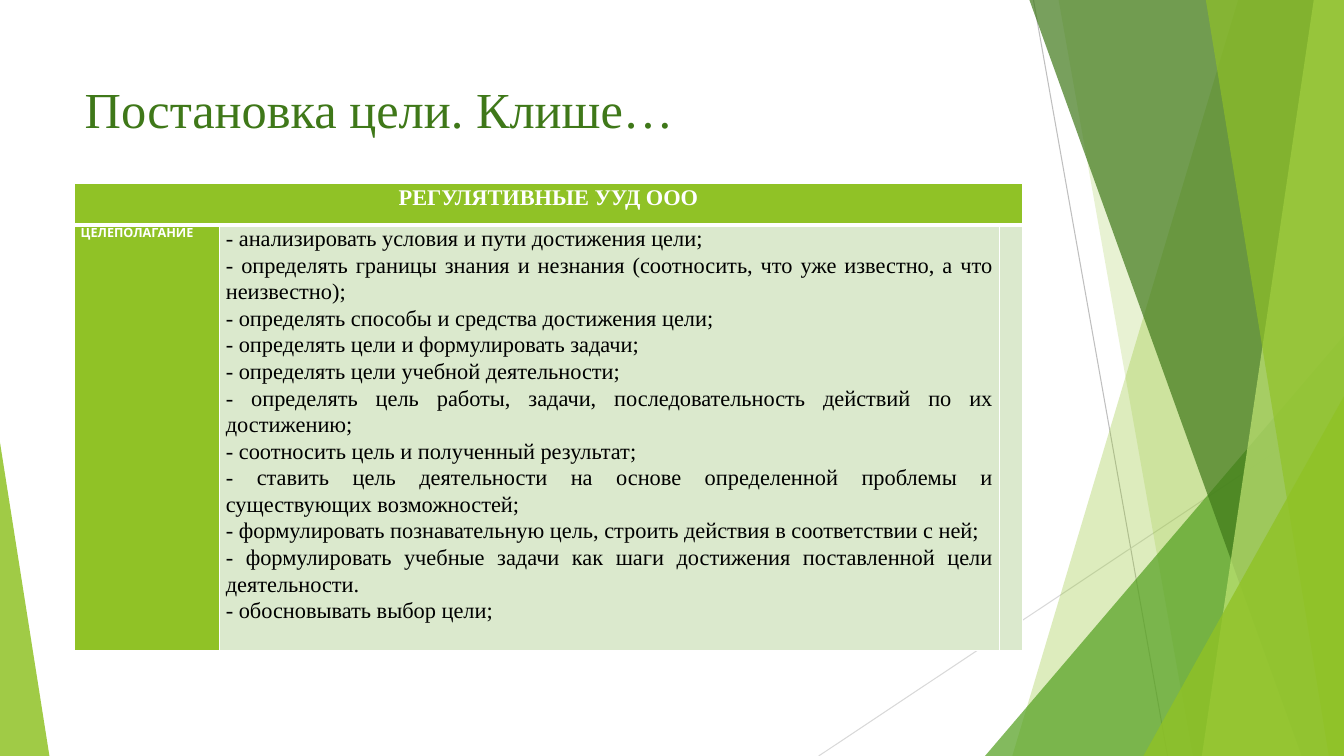
from dataclasses import dataclass

from lxml.etree import SubElement
from pptx import Presentation
from pptx.dml.color import RGBColor
from pptx.enum.shapes import MSO_CONNECTOR, MSO_SHAPE
from pptx.enum.text import MSO_ANCHOR, PP_ALIGN
from pptx.oxml.ns import qn
from pptx.util import Pt

PX = 9144  # 100 px to the inch
WIDTH, HEIGHT = 1333, 750


@dataclass(frozen=True)
class Theme:
    lime: str = "90C226"
    light_lime: str = "C0E474"
    green: str = "54A021"
    dark_green: str = "3F7819"
    pale: str = "DBE9CD"
    white: str = "FFFFFF"
    black: str = "000000"
    gray: str = "BFBFBF"
    light_gray: str = "D9D9D9"
    serif: str = "Times New Roman"
    sans: str = "Cabin"
    title_size: int = 36
    body_size: int = 16
    label_size: int = 9


class SlideBuilder:
    def __init__(self, page, theme):
        self.page, self.theme = page, theme

    def paint(self, shape, color, opacity):
        shape.shadow.inherit = False
        shape.fill.solid()
        shape.fill.fore_color.rgb = RGBColor.from_string(color)
        shape.line.fill.background()
        color_node = shape.fill._xPr.find(qn("a:solidFill"))[0]
        SubElement(color_node, qn("a:alpha"), val=str(opacity * 1000))

    def line(self, start, end, color):
        connector = self.page.shapes.add_connector(
            MSO_CONNECTOR.STRAIGHT, *(value * PX for value in start + end))
        connector.line.color.rgb = RGBColor.from_string(color)
        connector.line.width = Pt(0.75)
        SubElement(connector._element.spPr, qn("a:effectLst"))

    def band(self, top_x, bottom_x, color, opacity):
        """Band from a slanted left edge to the right side of the page."""
        outline = self.page.shapes.build_freeform(top_x, 0, scale=PX)
        outline.add_line_segments([(WIDTH, 0), (WIDTH, HEIGHT), (bottom_x, HEIGHT)])
        self.paint(outline.convert_to_shape(), color, opacity)

    def triangle(self, left, top, width, apex, color, opacity):
        """Triangle standing on the bottom edge of the page."""
        shape = self.page.shapes.add_shape(
            MSO_SHAPE.ISOSCELES_TRIANGLE, left * PX, top * PX,
            width * PX, (HEIGHT - top) * PX)
        shape.adjustments[0] = apex
        self.paint(shape, color, opacity)

    def span(self, para, text, font, size, color, bold=False):
        span = para.add_run()
        span.text = text
        span.font.name, span.font.size, span.font.bold = font, Pt(size), bold
        span.font.color.rgb = RGBColor.from_string(color)

    def title(self, text, left, top, width, height):
        box = self.page.shapes.title
        box.left, box.top, box.width, box.height = (
            value * PX for value in (left, top, width, height))
        frame = box.text_frame
        frame.word_wrap = True
        frame.vertical_anchor = MSO_ANCHOR.TOP
        frame.margin_left = frame.margin_top = 10 * PX
        para = frame.paragraphs[0]
        para.alignment = PP_ALIGN.LEFT
        self.span(para, text, self.theme.serif, self.theme.title_size,
                  self.theme.dark_green)

    def table(self, left, top, columns, rows):
        table = self.page.shapes.add_table(
            len(rows), len(columns), left * PX, top * PX,
            sum(columns) * PX, sum(rows) * PX).table
        for column, width in zip(table.columns, columns):
            column.width = width * PX
        for row, height in zip(table.rows, rows):
            row.height = height * PX
        return table

    def cell(self, cell, color, bottom_width=1, top_width=1):
        cell.margin_left = cell.margin_right = 6 * PX
        cell.margin_top = cell.margin_bottom = 0
        properties = cell._tc.get_or_add_tcPr()
        sides = {"L": 1, "R": 1, "T": top_width, "B": bottom_width}
        for side, points in sides.items():
            border = SubElement(properties, qn(f"a:ln{side}"), w=str(Pt(points)))
            fill = SubElement(border, qn("a:solidFill"))
            SubElement(fill, qn("a:srgbClr"), val=self.theme.white)
        cell.fill.solid()
        cell.fill.fore_color.rgb = RGBColor.from_string(color)

    def cell_text(self, cell, lines, alignment, font, size, color, bold=False):
        frame = cell.text_frame
        for index, text in enumerate(lines):
            para = frame.add_paragraph() if index else frame.paragraphs[0]
            para.alignment = alignment
            para.line_spacing = 1.07
            self.span(para, text, font, size, color, bold)


GOALS = [
    "- анализировать условия и пути достижения цели;",
    "- определять границы знания и незнания (соотносить, что уже известно, а что неизвестно);",
    "- определять способы и средства достижения цели;",
    "- определять цели и формулировать задачи;",
    "- определять цели учебной деятельности;",
    "- определять цель работы, задачи, последовательность действий по их достижению;",
    "- соотносить цель и полученный результат;",
    "- ставить цель деятельности на основе определенной проблемы и существующих возможностей;",
    "- формулировать познавательную цель, строить действия в соответствии с ней;",
    "- формулировать учебные задачи как шаги достижения поставленной цели деятельности.",
    "- обосновывать выбор цели;",
]


def main():
    deck = Presentation()
    deck.slide_width, deck.slide_height = WIDTH * PX, HEIGHT * PX
    theme = Theme()
    builder = SlideBuilder(deck.slides.add_slide(deck.slide_layouts[5]), theme)

    # Backdrop, from back to front
    builder.line((1025, 0), (1158, HEIGHT), theme.gray)
    builder.line((WIDTH, 403), (812, HEIGHT), theme.light_gray)
    builder.band(1228, 1004, theme.lime, 30)
    builder.band(1050, 1183, theme.lime, 20)
    builder.triangle(977, 333, 356, 1, theme.green, 72)
    builder.band(1021, 1291, theme.dark_green, 70)
    builder.band(1303, 1192, theme.light_lime, 70)
    builder.band(1196, 1318, theme.lime, 65)
    builder.triangle(1134, 393, 199, 1, theme.lime, 80)
    builder.triangle(0, 439, 49, 0, theme.lime, 85)

    # Title
    builder.title("Постановка цели. Клише…", 74, 67, 940, 91)

    # Table: merged heading above label, goals and a narrow empty column
    table = builder.table(74, 182, columns=[144, 773, 23], rows=[41, 422])
    for column, color in enumerate([theme.lime, theme.pale, theme.pale]):
        builder.cell(table.cell(0, column), theme.lime, bottom_width=3)
        builder.cell(table.cell(1, column), color, top_width=3)
    heading, label, goals = table.cell(0, 0), table.cell(1, 0), table.cell(1, 1)
    heading.merge(table.cell(0, 2))
    builder.cell_text(heading, ["РЕГУЛЯТИВНЫЕ УУД ООО"], PP_ALIGN.CENTER,
                      theme.serif, theme.body_size, theme.white, bold=True)
    builder.cell_text(label, ["ЦЕЛЕПОЛАГАНИЕ"], PP_ALIGN.LEFT,
                      theme.sans, theme.label_size, theme.white, bold=True)
    builder.cell_text(goals, GOALS, PP_ALIGN.JUSTIFY,
                      theme.serif, theme.body_size, theme.black)

    deck.save("out.pptx")


if __name__ == "__main__":
    main()
